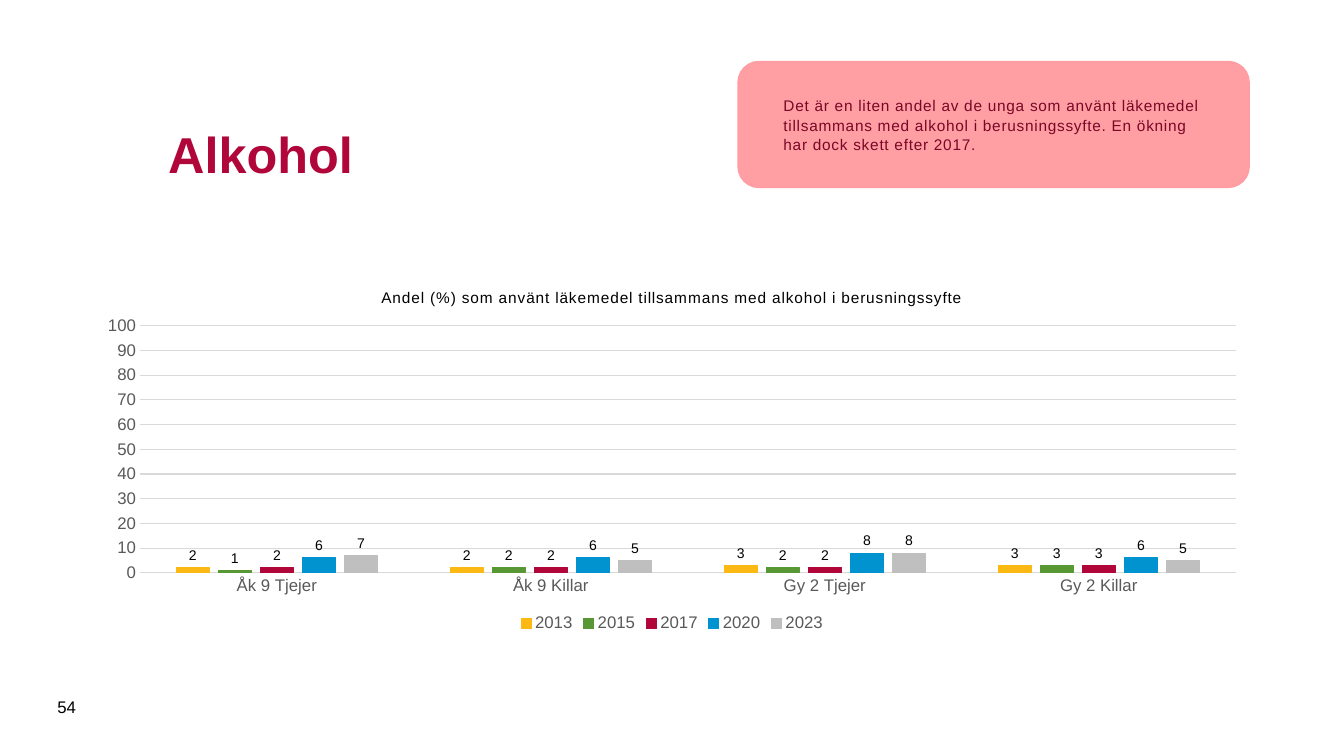
from lxml.etree import SubElement
from pptx import Presentation
from pptx.chart.data import CategoryChartData
from pptx.dml.color import RGBColor
from pptx.enum.chart import XL_CHART_TYPE as ChartType
from pptx.enum.chart import XL_LABEL_POSITION as LabelPosition
from pptx.enum.chart import XL_LEGEND_POSITION as LegendPosition
from pptx.enum.chart import XL_TICK_MARK as TickMark
from pptx.enum.shapes import MSO_SHAPE as Shape
from pptx.enum.text import MSO_ANCHOR as Anchor
from pptx.enum.text import PP_ALIGN as Align
from pptx.oxml import parse_xml
from pptx.oxml.ns import nsdecls, qn
from pptx.util import Inches, Pt

FONT = "Arial"
PINK, WINE, CRIMSON = "FF9DA2", "790726", "B1063A"
BLACK, GREY, RULE = "000000", "595959", "D9D9D9"
NUMBER_FORMAT = "#,##0;#,##0"
GROUPS = ["Åk 9 Tjejer", "Åk 9 Killar", "Gy 2 Tjejer", "Gy 2 Killar"]
YEARS = {
    "2013": ("FDB913", (2, 2, 3, 3)),
    "2015": ("579835", (1, 2, 2, 3)),
    "2017": (CRIMSON, (2, 2, 2, 3)),
    "2020": ("0093D0", (6, 6, 8, 6)),
    "2023": ("BFBFBF", (7, 5, 8, 5)),
}
PLOT_SHARES = {"x": 0.047, "y": 0.15, "w": 0.933, "h": 0.677}


def paint(color_format, hex_color):
    """Give a colour format an RGB colour."""
    color_format.rgb = RGBColor.from_string(hex_color)


def fill_with(fill, hex_color):
    """Make a fill solid in one colour."""
    fill.solid()
    paint(fill.fore_color, hex_color)


def draw_line(line, hex_color, width):
    """Colour a line and set its width in points."""
    fill_with(line.fill, hex_color)
    line.width = Pt(width)


def style_font(font, size, hex_color, bold=False):
    """Set size, colour and weight of a font."""
    font.name, font.size, font.bold = FONT, Pt(size), bold
    paint(font.color, hex_color)


def space_letters(paragraph):
    """Widen the letter spacing of a paragraph by half a point."""
    for run in paragraph.runs:
        run.font._element.set("spc", "50")


def add_label(slide, box, text, size, hex_color, bold=False):
    """Place a vertically centred line of text in a box."""
    frame = slide.shapes.add_textbox(*map(Inches, box)).text_frame
    frame.word_wrap, frame.vertical_anchor = True, Anchor.MIDDLE
    frame.text = text
    style_font(frame.paragraphs[0].font, size, hex_color, bold)


def add_comment(slide, box, text):
    """Place the rounded pink panel with its comment."""
    panel = slide.shapes.add_shape(Shape.ROUNDED_RECTANGLE, *map(Inches, box))
    panel.shadow.inherit = False
    fill_with(panel.fill, PINK)
    panel_color = panel.fill._xPr.find(qn("a:solidFill"))[0]
    SubElement(panel_color, qn("a:alpha"), val="98000")
    draw_line(panel.line, PINK, 1)
    frame = panel.text_frame
    frame.word_wrap, frame.vertical_anchor = True, Anchor.MIDDLE
    frame.margin_left = frame.margin_right = Inches(0.39)
    frame.margin_top = frame.margin_bottom = Inches(0.2)
    frame.text = text
    comment = frame.paragraphs[0]
    comment.alignment, comment.line_spacing = Align.LEFT, 1.05
    style_font(comment.font, 11, WINE)
    space_letters(comment)


def style_axes(chart):
    """Format the category axis and the 0 to 100 scale."""
    groups, scale = chart.category_axis, chart.value_axis
    for axis in (groups, scale):
        axis.major_tick_mark = axis.minor_tick_mark = TickMark.NONE
        style_font(axis.tick_labels.font, 12, GREY)
    draw_line(groups.format.line, RULE, 0.75)
    scale.minimum_scale, scale.maximum_scale, scale.major_unit = 0, 100, 10
    scale.tick_labels.number_format = NUMBER_FORMAT
    scale.tick_labels.number_format_is_linked = False
    scale.format.line.fill.background()
    draw_line(scale.major_gridlines.format.line, RULE, 0.75)


def style_columns(plot):
    """Colour and label the columns of each year."""
    plot.gap_width, plot.overlap, plot.vary_by_categories = 219, -27, False
    for year in plot.series:
        hex_color = YEARS[year.name][0]
        fill_with(year.format.fill, hex_color)
        draw_line(year.format.line, hex_color, 0.75)
        labels = year.data_labels
        labels.show_value, labels.position = True, LabelPosition.OUTSIDE_END
        labels.number_format = NUMBER_FORMAT
        labels.number_format_is_linked = False
        style_font(labels.font, 10, BLACK)


def fix_plot_area(chart):
    """Set the inner plot area in shares of the chart."""
    plot_area = chart._chartSpace.chart.plotArea
    for layout in plot_area.findall(qn("c:layout")):
        plot_area.remove(layout)
    shares = "".join(f'<c:{side} val="{share}"/>' for side, share in PLOT_SHARES.items())
    plot_area.insert(0, parse_xml(
        f'<c:layout {nsdecls("c")}><c:manualLayout><c:layoutTarget val="inner"/>'
        f'<c:xMode val="edge"/><c:yMode val="edge"/>{shares}</c:manualLayout></c:layout>'))


def add_year_chart(slide, box, title):
    """Place the clustered column chart of shares by group and year."""
    shares = CategoryChartData(number_format=NUMBER_FORMAT)
    shares.categories = GROUPS
    for year, (_, values) in YEARS.items():
        shares.add_series(year, values)
    chart = slide.shapes.add_chart(
        ChartType.COLUMN_CLUSTERED, *map(Inches, box), shares).chart
    style_font(chart.font, 10, BLACK)
    chart.has_title = True
    chart.chart_title.text_frame.text = title
    chart.chart_title.include_in_layout = False
    heading = chart.chart_title.text_frame.paragraphs[0]
    style_font(heading.font, 11, BLACK)
    space_letters(heading)
    chart.has_legend = True
    chart.legend.position = LegendPosition.BOTTOM
    chart.legend.include_in_layout = False
    style_font(chart.legend.font, 12, GREY)
    style_axes(chart)
    style_columns(chart.plots[0])
    fix_plot_area(chart)


def main():
    """Build and save the alcohol slide."""
    deck = Presentation()
    deck.slide_width, deck.slide_height = Inches(13.33), Inches(7.5)
    slide = deck.slides.add_slide(deck.slide_layouts[6])
    add_label(slide, (1.57, 0.81, 10.24, 1.42), "Alkohol", 36, CRIMSON, bold=True)
    add_label(slide, (0.47, 6.81, 0.57, 0.4), "54", 12, BLACK)
    add_comment(
        slide, (7.32, 0.61, 5.07, 1.25),
        "Det är en liten andel av de unga som använt läkemedel tillsammans med "
        "alkohol i berusningssyfte. En ökning har dock skett efter 2017.")
    add_year_chart(
        slide, (0.84, 2.69, 11.65, 3.62),
        "Andel (%) som använt läkemedel tillsammans med alkohol i berusningssyfte")
    deck.save("out.pptx")


if __name__ == "__main__":
    main()
